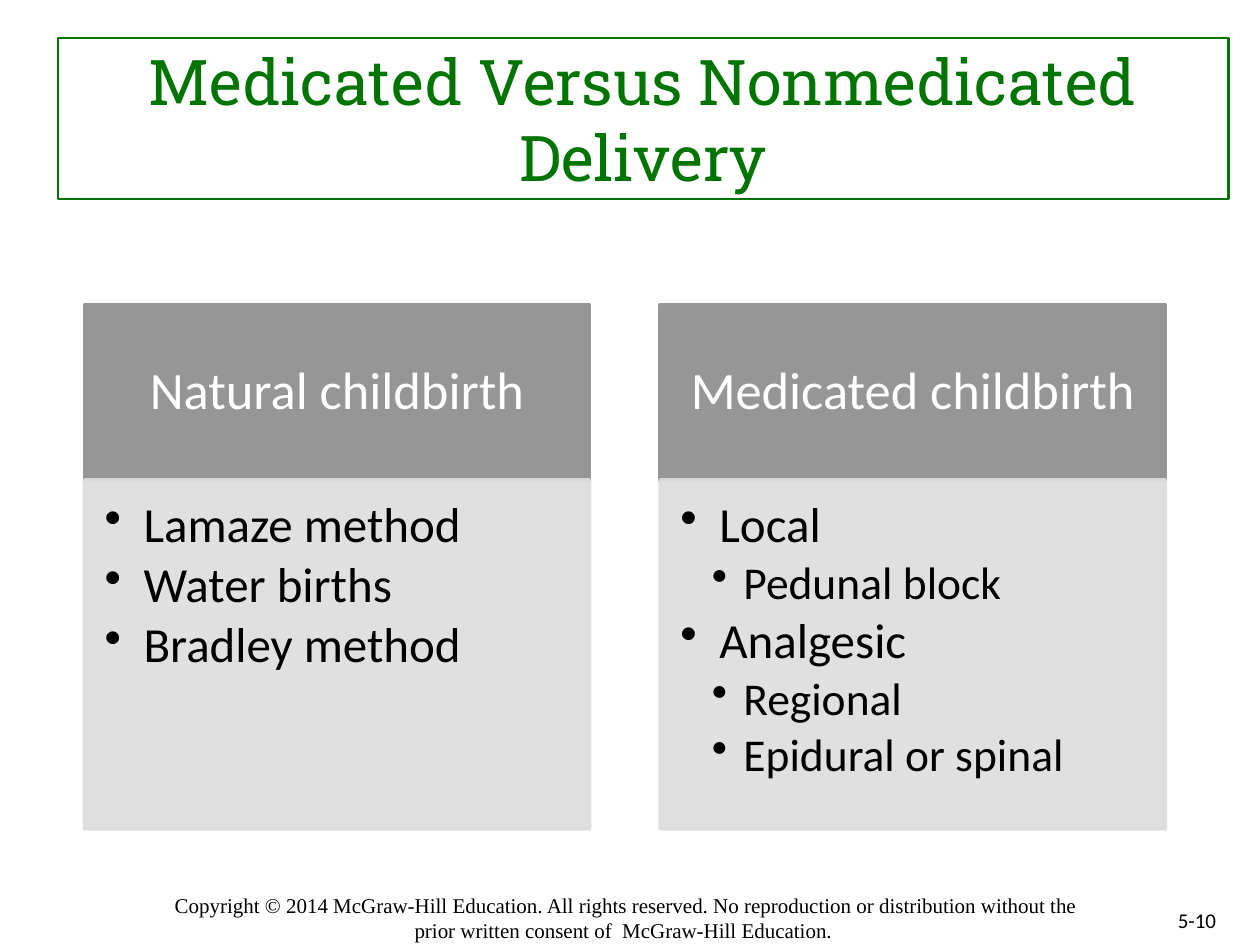
import pptx
import pptx.util
import pptx.dml.color
import pptx.enum.shapes
import pptx.enum.text
import pptx.oxml
import pptx.oxml.ns
from dataclasses import dataclass

Inches = pptx.util.Inches
Pt = pptx.util.Pt
Align = pptx.enum.text.PP_ALIGN
Anchor = pptx.enum.text.MSO_ANCHOR


@dataclass(frozen=True)
class Theme:
    green: str = "007400"
    header: str = "969696"
    body: str = "DDDDDD"
    white: str = "FFFFFF"
    black: str = "000000"
    title_font: str = "Roboto Slab"
    text_font: str = "Calibri"
    copyright_font: str = "Times New Roman"
    title_size: int = 36
    header_size: int = 30
    item_sizes: tuple = (28, 26)
    small_size: int = 12


theme = Theme()


def style(paragraph, face, size, color, align):
    paragraph.alignment = align
    for run in paragraph.runs:
        run.font.name = face
        run.font.size = Pt(size)
        run.font.color.rgb = pptx.dml.color.RGBColor.from_string(color)


def add_panel(left, top, height, color, margins, anchor):
    panel = slide.shapes.add_shape(
        pptx.enum.shapes.MSO_SHAPE.RECTANGLE,
        Inches(left), Inches(top), Inches(panel_width), Inches(height))
    panel.shadow.inherit = False
    panel.fill.solid()
    panel.fill.fore_color.rgb = pptx.dml.color.RGBColor.from_string(color)
    panel.line.color.rgb = pptx.dml.color.RGBColor.from_string(color)
    panel.line.width = Pt(2)
    frame = panel.text_frame
    frame.word_wrap = True
    frame.vertical_anchor = anchor
    frame.margin_left, frame.margin_top, frame.margin_right, frame.margin_bottom = map(Inches, margins)
    return panel


deck = pptx.Presentation()
deck.slide_width = Inches(10)
deck.slide_height = Inches(7.5)
slide = deck.slides.add_slide(deck.slide_layouts[5])

copyright_line = slide.shapes.add_textbox(Inches(1.27), Inches(7.08), Inches(7.4), Inches(0.4))
frame = copyright_line.text_frame
frame.word_wrap = True
frame.margin_left = frame.margin_top = frame.margin_right = frame.margin_bottom = 0
frame.text = (
    "Copyright © 2014 McGraw-Hill Education. All rights reserved. No reproduction or "
    "distribution without the prior written consent of  McGraw-Hill Education. ")
style(frame.paragraphs[0], theme.copyright_font, theme.small_size, theme.black, Align.CENTER)

title = slide.shapes.title
title.left, title.top, title.width, title.height = map(Inches, (0.46, 0.3, 9.29, 1.28))
title.line.color.rgb = pptx.dml.color.RGBColor.from_string(theme.green)
title.line.width = Pt(1.25)
title.text_frame.text = "Medicated Versus Nonmedicated Delivery"
title.text_frame.vertical_anchor = Anchor.MIDDLE
style(title.text_frame.paragraphs[0], theme.title_font, theme.title_size, theme.green, Align.CENTER)

panel_left, panel_width, panel_pitch = 0.67, 4.01, 4.57
header_top, header_height, body_height = 2.42, 1.39, 2.77
indents = [(0.31, 0.31), (0.5, 0.25)]
childbirth_types = [
    ("Natural childbirth", [
        (0, "Lamaze method"), (0, "Water births"), (0, "Bradley method")]),
    ("Medicated childbirth", [
        (0, "Local"), (1, "Pedunal block"), (0, "Analgesic"),
        (1, "Regional"), (1, "Epidural or spinal")]),
]

for column, (heading, methods) in enumerate(childbirth_types):
    left = panel_left + column * panel_pitch
    header = add_panel(left, header_top, header_height, theme.header,
                       (0.23, 0.13, 0.23, 0.13), Anchor.MIDDLE)
    header.text_frame.text = heading
    header.text_frame.paragraphs[0].line_spacing = 0.9
    style(header.text_frame.paragraphs[0], theme.text_font, theme.header_size, theme.white, Align.CENTER)

    body = add_panel(left, header_top + header_height, body_height, theme.body,
                     (0.16, 0.16, 0.22, 0.24), Anchor.TOP)
    for color in body.fill._xPr.iter(pptx.oxml.ns.qn("a:srgbClr")):
        color.append(pptx.oxml.parse_xml(
            f'<a:alpha {pptx.oxml.ns.nsdecls("a")} val="90000"/>'))
    body.text_frame.text = "\n".join(method for _, method in methods)
    for paragraph, (depth, _) in zip(body.text_frame.paragraphs, methods):
        paragraph.level = depth + 1
        paragraph.line_spacing = 0.9
        paragraph.space_after = Pt(4)
        margin, hanging = indents[depth]
        properties = paragraph._p.get_or_add_pPr()
        properties.set("marL", str(Inches(margin)))
        properties.set("indent", str(-Inches(hanging)))
        properties.append(pptx.oxml.parse_xml(
            f'<a:buChar {pptx.oxml.ns.nsdecls("a")} char="•"/>'))
        style(paragraph, theme.text_font, theme.item_sizes[depth], theme.black, Align.LEFT)

page_number = slide.shapes.add_textbox(Inches(7.42), Inches(7.1), Inches(2.33), Inches(0.4))
page_number.text_frame.word_wrap = True
page_number.text_frame.vertical_anchor = Anchor.MIDDLE
page_number.text_frame.text = "5-10"
style(page_number.text_frame.paragraphs[0], theme.text_font, theme.small_size, theme.black, Align.RIGHT)

deck.save("out.pptx")
